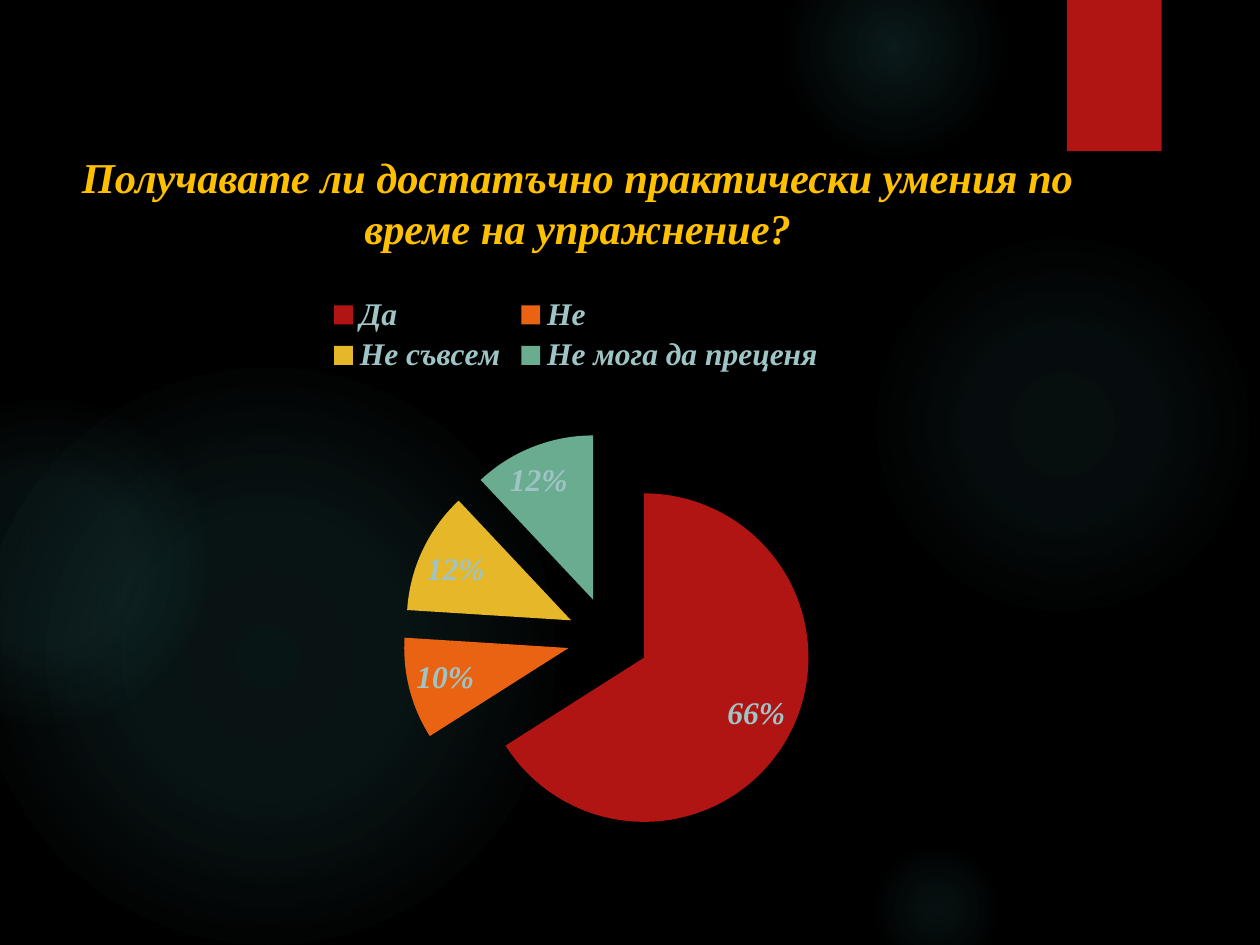
from dataclasses import dataclass

from pptx import Presentation
from pptx.chart.data import CategoryChartData
from pptx.dml.color import RGBColor
from pptx.enum.chart import XL_CHART_TYPE, XL_LABEL_POSITION, XL_LEGEND_POSITION
from pptx.enum.shapes import MSO_SHAPE
from pptx.enum.text import MSO_ANCHOR, MSO_AUTO_SIZE, PP_ALIGN
from pptx.oxml import parse_xml
from pptx.oxml.ns import nsdecls
from pptx.util import Cm, Pt

OVAL, RECT = MSO_SHAPE.OVAL, MSO_SHAPE.RECTANGLE
PIE = XL_CHART_TYPE.PIE
BEST = XL_LABEL_POSITION.BEST_FIT
TOP_KEY = XL_LEGEND_POSITION.TOP
TOP, CENTER = MSO_ANCHOR.TOP, PP_ALIGN.CENTER
NO_FIT = MSO_AUTO_SIZE.NONE

SERIF = "Times New Roman"
BLACK, RED, GOLD, PALE, GLOW = "000000", "B01513", "FFC000", "9FC4C5", "50B9C1"
AREA = {"x": 0.31, "y": 0.26, "w": 0.45, "h": 0.71}  # pie, as shares of the chart


@dataclass
class Halo:
    left: float
    top: float
    size: float
    stops: tuple[tuple[int, int], ...]  # (position %, opacity %)


@dataclass
class Slice:
    name: str
    share: int
    color: str


HALOS = [
    Halo(17.5, 4.65, 7.82, ((0, 7), (36, 6), (69, 0))),
    Halo(15.8, -1.27, 4.45, ((0, 14), (36, 7), (73, 0))),
    Halo(17.5, 16.94, 2.74, ((0, 9), (36, 5), (66, 0))),
    Halo(-0.43, 7.42, 11.63, ((0, 11), (36, 10), (75, 0))),
    Halo(-2.34, 8.05, 6.55, ((0, 8), (36, 8), (72, 0))),
]
SLICES = [
    Slice("Да", 66, RED),
    Slice("Не", 10, "EA6312"),
    Slice("Не съвсем", 12, "E6B729"),
    Slice("Не мога да преценя", 12, "6AAC90"),
]


def rgb(code: str) -> RGBColor:
    return RGBColor.from_string(code)


def paint(fill, code: str) -> None:
    fill.solid()
    fill.fore_color.rgb = rgb(code)


def style(font, size: float, code: str) -> None:
    font.name, font.size = SERIF, Pt(size)
    font.bold = font.italic = True
    font.color.rgb = rgb(code)


def add_form(slide, kind, left: float, top: float, wide: float, high: float):
    form = slide.shapes.add_shape(kind, Cm(left), Cm(top), Cm(wide), Cm(high))
    form.shadow.inherit = False
    form.line.fill.background()
    return form


def add_halo(slide, halo: Halo) -> None:
    form = add_form(slide, OVAL, halo.left, halo.top, halo.size, halo.size)
    stops = "".join(
        f'<a:gs pos="{pos * 1000}"><a:srgbClr val="{GLOW}">'
        f'<a:alpha val="{alpha * 1000}"/></a:srgbClr></a:gs>'
        for pos, alpha in halo.stops
    )
    grad = parse_xml(
        f'<a:gradFill {nsdecls("a")} rotWithShape="1"><a:gsLst>{stops}</a:gsLst>'
        '<a:path path="circle"><a:fillToRect l="50000" t="50000" r="50000" b="50000"/>'
        "</a:path></a:gradFill>"
    )
    form._element.spPr.prstGeom.addnext(grad)


def add_title(slide, words: str) -> None:
    title = slide.shapes.title
    title.left, title.top, title.width, title.height = Cm(1.27), Cm(1.32), Cm(20.75), Cm(3.4)
    slide.shapes._spTree.append(title._element)  # bring in front of the halos
    frame = title.text_frame
    frame.word_wrap, frame.auto_size = True, NO_FIT
    frame.vertical_anchor, frame.margin_top = TOP, Cm(1.72)
    para = frame.paragraphs[0]
    para.alignment = CENTER
    run = para.add_run()
    run.text = words
    style(run.font, 24.3, GOLD)


def place_plot(chart) -> None:
    spots = "".join(f'<c:{key}Mode val="edge"/>' for key in "xy")
    spots += "".join(f'<c:{key} val="{val}"/>' for key, val in AREA.items())
    area = chart._chartSpace.chart.plotArea
    for old in area.findall("{*}layout"):
        area.remove(old)
    area.insert(0, parse_xml(
        f'<c:layout {nsdecls("c")}><c:manualLayout><c:layoutTarget val="inner"/>'
        f"{spots}</c:manualLayout></c:layout>"
    ))


def add_pie(slide, slices: list[Slice]) -> None:
    data = CategoryChartData()
    data.categories = [part.name for part in slices]
    data.add_series("Series 1", [part.share for part in slices])
    chart = slide.shapes.add_chart(
        PIE, Cm(2.29), Cm(5.69), Cm(18.64), Cm(11.66), data
    ).chart
    chart.has_title = False
    style(chart.font, 18, PALE)
    place_plot(chart)

    chart.has_legend = True
    chart.legend.position = TOP_KEY
    chart.legend.include_in_layout = False
    style(chart.legend.font, 18, PALE)

    plot = chart.plots[0]
    plot.vary_by_categories = True
    series = plot.series[0]
    for spot, part in enumerate(slices):
        form = series.points[spot].format
        paint(form.fill, part.color)
        form.line.fill.background()
    burst = parse_xml(f'<c:explosion {nsdecls("c")} val="25"/>')
    series._element.dPt_lst[0].addprevious(burst)

    plot.has_data_labels = True
    tags = plot.data_labels
    tags.show_percentage, tags.show_value = True, False
    tags.number_format, tags.number_format_is_linked = "0%", False
    tags.position = BEST
    style(tags.font, 18, PALE)


def main() -> None:
    deck = Presentation()
    deck.slide_width, deck.slide_height = Cm(25.4), Cm(19.05)
    slide = deck.slides.add_slide(deck.slide_layouts[5])

    # Backdrop
    paint(slide.background.fill, BLACK)
    for halo in HALOS:
        add_halo(slide, halo)
    paint(add_form(slide, RECT, 21.51, 0, 1.91, 3.05).fill, RED)

    # Question and answers
    add_title(slide, "Получавате ли достатъчно практически умения по време на упражнение?")
    add_pie(slide, SLICES)
    deck.save("out.pptx")


if __name__ == "__main__":
    main()
